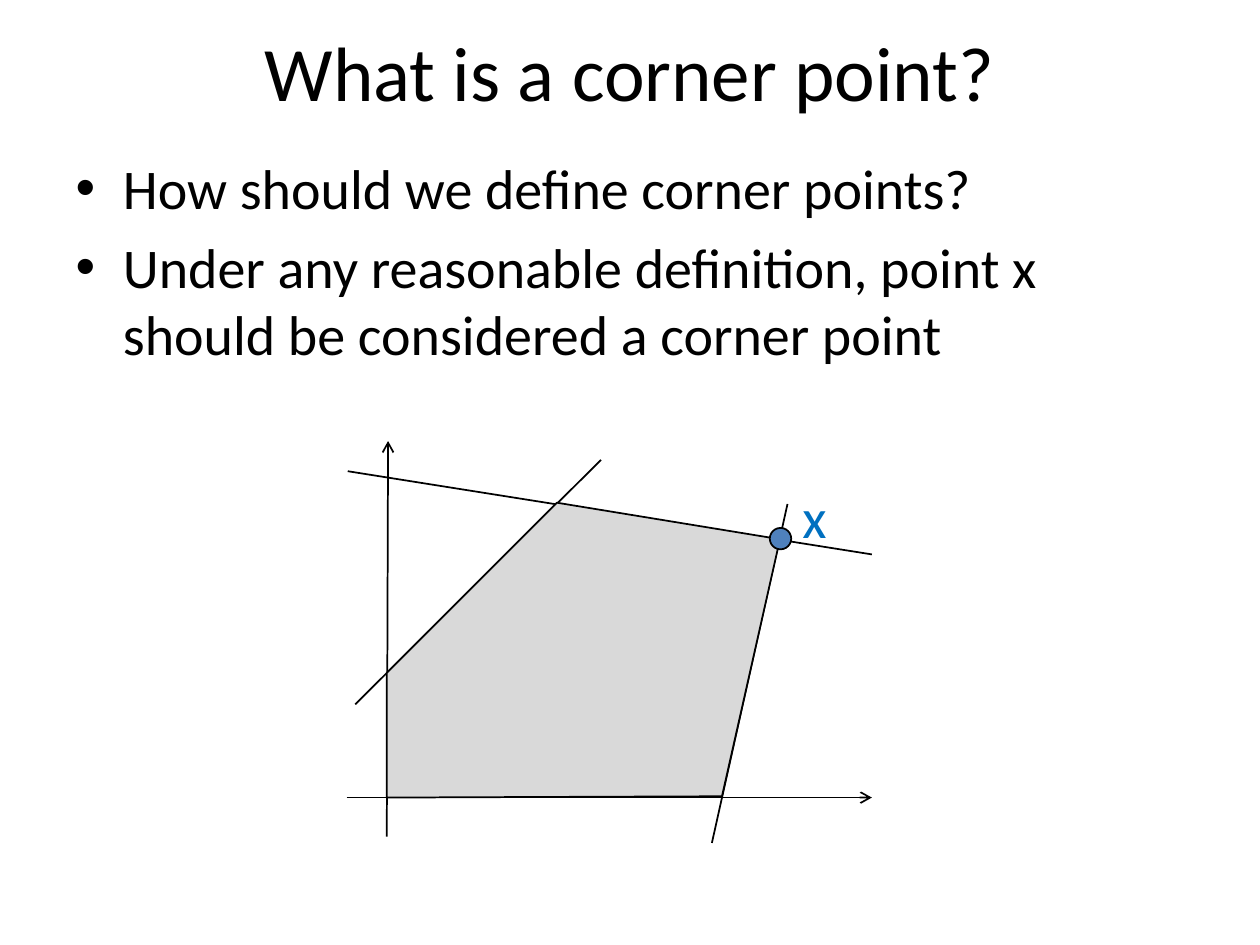
from typing import NamedTuple

from lxml.etree import SubElement
from pptx import Presentation
from pptx.dml.color import RGBColor
from pptx.enum.shapes import MSO_CONNECTOR, MSO_SHAPE
from pptx.enum.text import MSO_ANCHOR, PP_ALIGN
from pptx.oxml.ns import qn
from pptx.util import Inches, Pt

BLACK = RGBColor(0x00, 0x00, 0x00)
REGION_GRAY = RGBColor(0xD9, 0xD9, 0xD9)
POINT_BLUE = RGBColor(0x4F, 0x81, 0xBD)
LABEL_BLUE = RGBColor(0x00, 0x70, 0xC0)
FONT = "Calibri"


class Point(NamedTuple):
    x: float
    y: float


class Line(NamedTuple):
    start: Point
    end: Point
    arrow: bool = False


AXES_AND_CONSTRAINTS = [
    Line(Point(3.07, 6.64), Point(3.08, 3.5), arrow=True),
    Line(Point(2.75, 6.33), Point(6.92, 6.33), arrow=True),
    Line(Point(2.76, 3.74), Point(6.92, 4.4)),
    Line(Point(2.82, 5.59), Point(4.77, 3.65)),
    Line(Point(5.65, 6.69), Point(6.25, 4)),
]
FEASIBLE_REGION = [
    Point(3.07, 5.34),
    Point(3.07, 6.33),
    Point(5.73, 6.32),
    Point(6.19, 4.28),
    Point(4.42, 3.99),
]
CORNER = Point(6.195, 4.275)
CORNER_SIZE = 0.17


def place(shape, left: float, top: float, width: float, height: float) -> None:
    shape.left, shape.top = Inches(left), Inches(top)
    shape.width, shape.height = Inches(width), Inches(height)


def write_text(frame, *paragraphs: str, size: float, color: RGBColor = BLACK,
               align=None, anchor=None, wrap: bool = True) -> None:
    frame.word_wrap = wrap
    if anchor is not None:
        frame.vertical_anchor = anchor
    for index, words in enumerate(paragraphs):
        paragraph = frame.add_paragraph() if index else frame.paragraphs[0]
        paragraph.alignment = align
        run = paragraph.add_run()
        run.text = words
        run.font.name = FONT
        run.font.size = Pt(size)
        run.font.color.rgb = color


def draw_line(shapes, line: Line) -> None:
    connector = shapes.add_connector(
        MSO_CONNECTOR.STRAIGHT,
        Inches(line.start.x), Inches(line.start.y),
        Inches(line.end.x), Inches(line.end.y),
    )
    connector.line.color.rgb = BLACK
    connector.line.width = Pt(1)
    if line.arrow:
        SubElement(connector.line._get_or_add_ln(), qn("a:tailEnd"), type="arrow")
    SubElement(connector._element.spPr, qn("a:effectLst"))


def paint(shape, fill: RGBColor) -> None:
    shape.shadow.inherit = False
    shape.fill.solid()
    shape.fill.fore_color.rgb = fill
    shape.line.color.rgb = BLACK
    shape.line.width = Pt(1)


def draw_region(shapes, corners: list[Point], fill: RGBColor) -> None:
    start, *others = [(Inches(x), Inches(y)) for x, y in corners]
    builder = shapes.build_freeform(*start)
    builder.add_line_segments(others, close=True)
    paint(builder.convert_to_shape(), fill)


def draw_dot(shapes, center: Point, size: float, fill: RGBColor) -> None:
    dot = shapes.add_shape(
        MSO_SHAPE.OVAL,
        Inches(center.x - size / 2), Inches(center.y - size / 2),
        Inches(size), Inches(size),
    )
    paint(dot, fill)


def main() -> None:
    presentation = Presentation()
    presentation.slide_width, presentation.slide_height = Inches(10), Inches(7.5)
    slide = presentation.slides.add_slide(presentation.slide_layouts[1])
    shapes = slide.shapes

    title = shapes.title
    place(title, 0.5, 0.05, 9, 1.03)
    write_text(title.text_frame, "What is a corner point?", size=44,
               align=PP_ALIGN.CENTER, anchor=MSO_ANCHOR.MIDDLE)

    body = slide.placeholders[1]
    place(body, 0.5, 1.17, 9, 1.87)
    write_text(
        body.text_frame,
        "How should we define corner points?",
        "Under any reasonable definition, point x should be considered a corner point",
        size=32,
    )

    for line in AXES_AND_CONSTRAINTS:
        draw_line(shapes, line)
    draw_region(shapes, FEASIBLE_REGION, REGION_GRAY)
    draw_dot(shapes, CORNER, CORNER_SIZE, POINT_BLUE)

    corner_label = shapes.add_textbox(Inches(6.27), Inches(3.78), Inches(0.4), Inches(0.64))
    write_text(corner_label.text_frame, "x", size=32, color=LABEL_BLUE, wrap=False)

    presentation.save("out.pptx")


if __name__ == "__main__":
    main()
